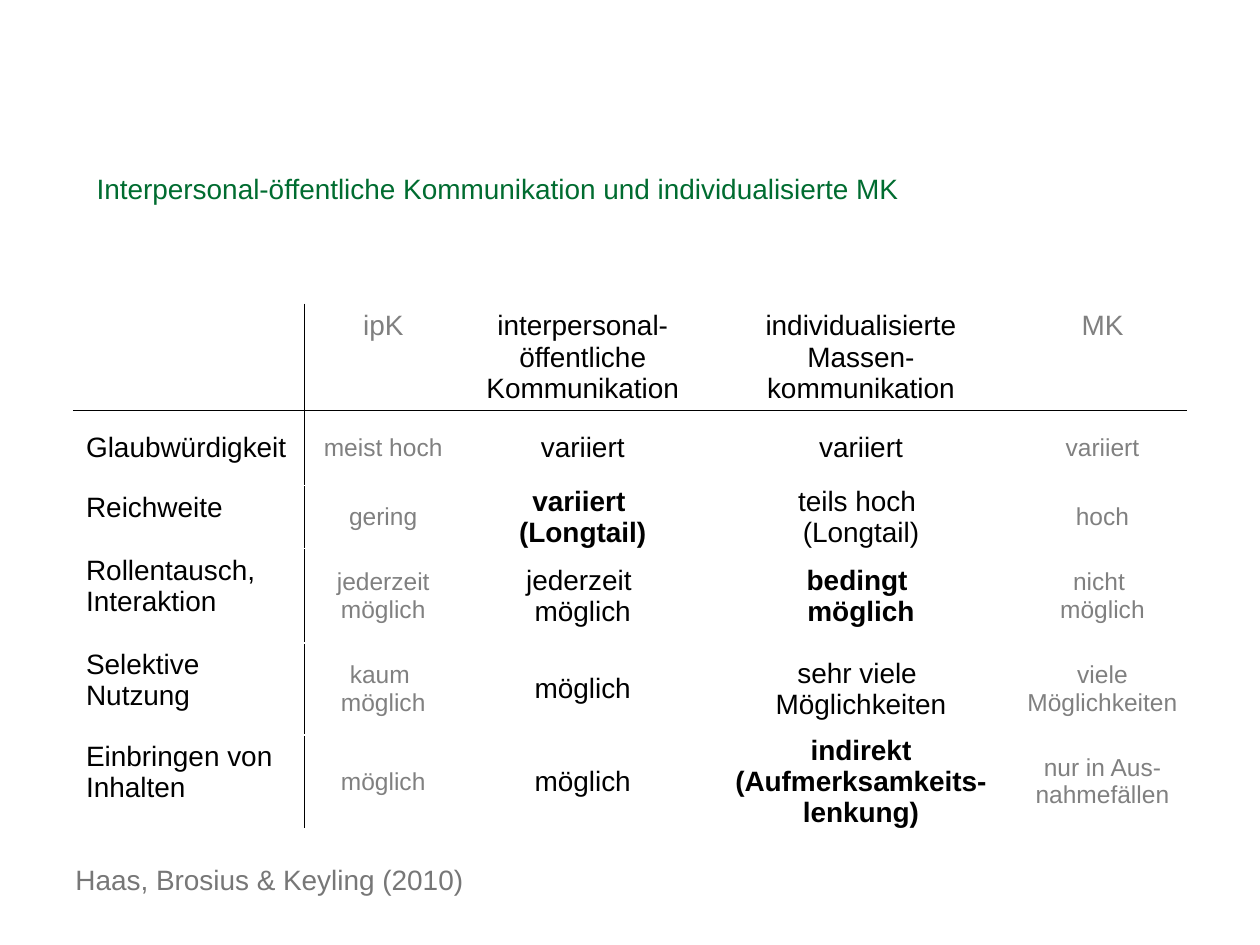
from lxml import etree
from pptx import Presentation
from pptx.dml.color import RGBColor
from pptx.enum.text import MSO_ANCHOR, PP_ALIGN
from pptx.oxml.ns import qn
from pptx.util import Pt

TOP, MIDDLE = MSO_ANCHOR.TOP, MSO_ANCHOR.MIDDLE
LEFT, CENTER = PP_ALIGN.LEFT, PP_ALIGN.CENTER
TITLE_ONLY = 5
FONT = "Arial"
GREEN, BLACK, GRAY, SOURCE_GRAY = "006C30", "000000", "808080", "777777"

COLUMN_WIDTHS = [132, 90, 138, 180, 96]
ROW_HEIGHTS = [49, 43, 36, 54, 52.5, 49]
OUTER_COLUMNS = (1, 4)
EMPHASIZED = {(2, 2), (3, 3), (5, 3)}
COMPARISON = [
    ["", "ipK", "interpersonal-öffentliche Kommunikation",
     "individualisierte Massen-kommunikation", "MK"],
    ["Glaubwürdigkeit", "meist hoch", "variiert", "variiert", "variiert"],
    ["Reichweite", "gering", "variiert \n(Longtail)", "teils hoch \n(Longtail)", "hoch"],
    ["Rollentausch, Interaktion", "jederzeit möglich", "jederzeit \nmöglich",
     "bedingt \nmöglich", "nicht \nmöglich"],
    ["Selektive Nutzung", "kaum \nmöglich", "möglich",
     "sehr viele \nMöglichkeiten", "viele Möglichkeiten"],
    ["Einbringen von Inhalten", "möglich", "möglich",
     "indirekt (Aufmerksamkeits-lenkung)", "nur in Aus-nahmefällen"],
]


def color(hex_string):
    return RGBColor.from_string(hex_string)


def set_all(target, values):
    for name, value in values.items():
        setattr(target, name, value)


def write(frame, text, hex_color, size=16, bold=False, align=LEFT):
    paragraph = frame.paragraphs[0]
    paragraph.text = text
    paragraph.alignment = align
    for run in paragraph.runs:
        set_all(run.font, {"name": FONT, "size": Pt(size), "bold": bold})
        run.font.color.rgb = color(hex_color)


def add_borders(cell, sides):
    properties = cell._tc.get_or_add_tcPr()
    for side in sides:
        line = etree.SubElement(properties, qn(f"a:ln{side}"), w=str(Pt(1)))
        fill = etree.SubElement(line, qn("a:solidFill"))
        etree.SubElement(fill, qn("a:srgbClr"), val=BLACK)


def place_title(slide, left, top, width, height):
    title = slide.shapes.title
    set_all(title, {"left": Pt(left), "top": Pt(top),
                    "width": Pt(width), "height": Pt(height)})
    set_all(title.text_frame, {"vertical_anchor": TOP, "word_wrap": True})
    write(title.text_frame, slide_title, GREEN)


def cell_borders(row, column):
    """Rule below the header row and to the right of the label column."""
    rules = [("L", column == 1), ("R", column == 0), ("T", row == 1), ("B", row == 0)]
    return [side for side, drawn in rules if drawn]


def place_comparison(slide, left, top, width, height):
    table = slide.shapes.add_table(len(ROW_HEIGHTS), len(COLUMN_WIDTHS), Pt(left),
                                   Pt(top), Pt(width), Pt(height)).table
    set_all(table, {"first_row": False, "horz_banding": False})
    for table_column, column_width in zip(table.columns, COLUMN_WIDTHS):
        table_column.width = Pt(column_width)
    for table_row, row_height in zip(table.rows, ROW_HEIGHTS):
        table_row.height = Pt(row_height)

    for row, entries in enumerate(COMPARISON):
        for column, entry in enumerate(entries):
            cell = table.cell(row, column)
            add_borders(cell, cell_borders(row, column))
            cell.fill.background()
            is_value = row > 0 and column > 0
            is_outer = column in OUTER_COLUMNS
            if is_value:
                set_all(cell, {"margin_left": 0, "margin_right": 0,
                               "margin_top": 0, "margin_bottom": 0})
            cell.vertical_anchor = MIDDLE if is_value or row == 1 else TOP
            write(cell.text_frame, entry, GRAY if is_outer else BLACK,
                  size=14 if is_value and is_outer else 16,
                  bold=(row, column) in EMPHASIZED,
                  align=CENTER if column > 0 else LEFT)


def place_source(slide, left, top, width, height):
    source = slide.shapes.add_textbox(Pt(left), Pt(top), Pt(width), Pt(height))
    source.text_frame.word_wrap = True
    write(source.text_frame, "Haas, Brosius & Keyling (2010)", SOURCE_GRAY)


slide_title = "Interpersonal-öffentliche Kommunikation und individualisierte MK"


def main():
    presentation = Presentation()
    set_all(presentation, {"slide_width": Pt(720), "slide_height": Pt(540)})
    slide = presentation.slides.add_slide(presentation.slide_layouts[TITLE_ONLY])
    place_title(slide, 48, 94.5, 648, 90)
    place_comparison(slide, 42, 174, sum(COLUMN_WIDTHS), sum(ROW_HEIGHTS))
    place_source(slide, 36, 489.5, 558, 26.5)
    presentation.save("out.pptx")


if __name__ == "__main__":
    main()
